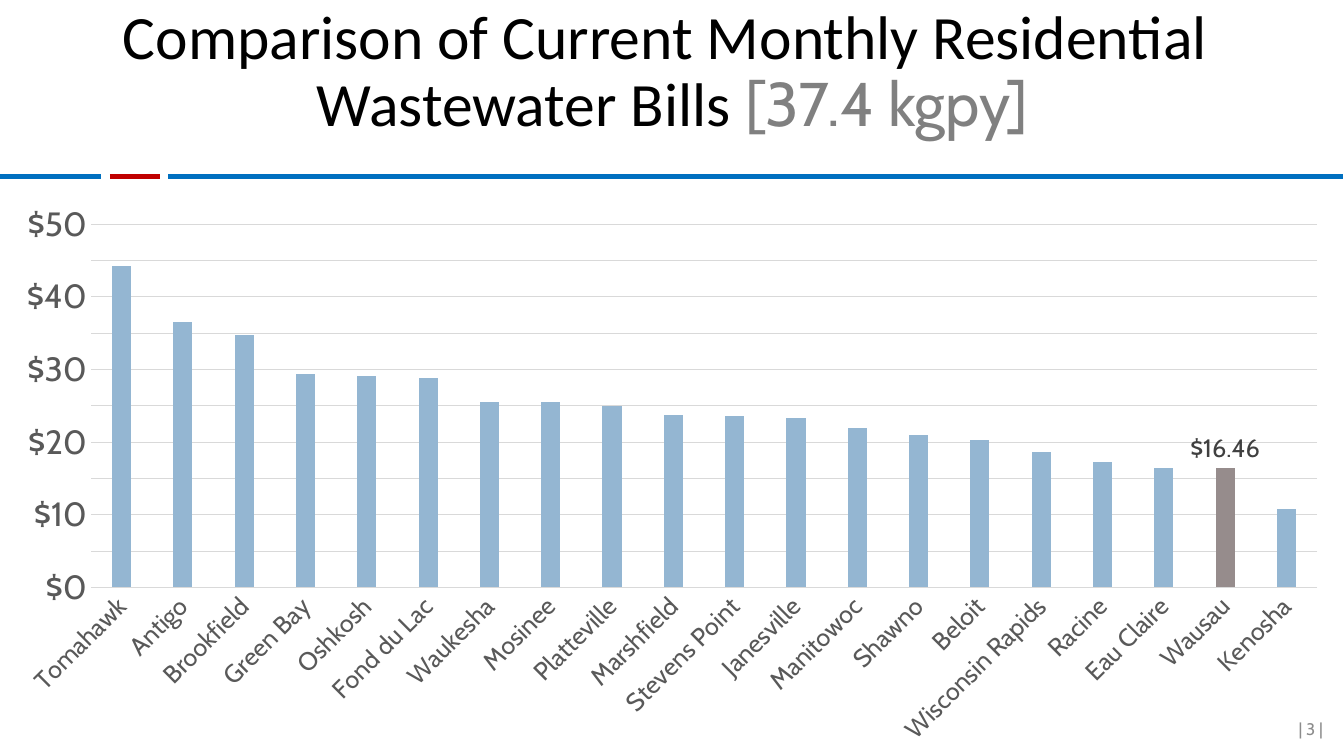
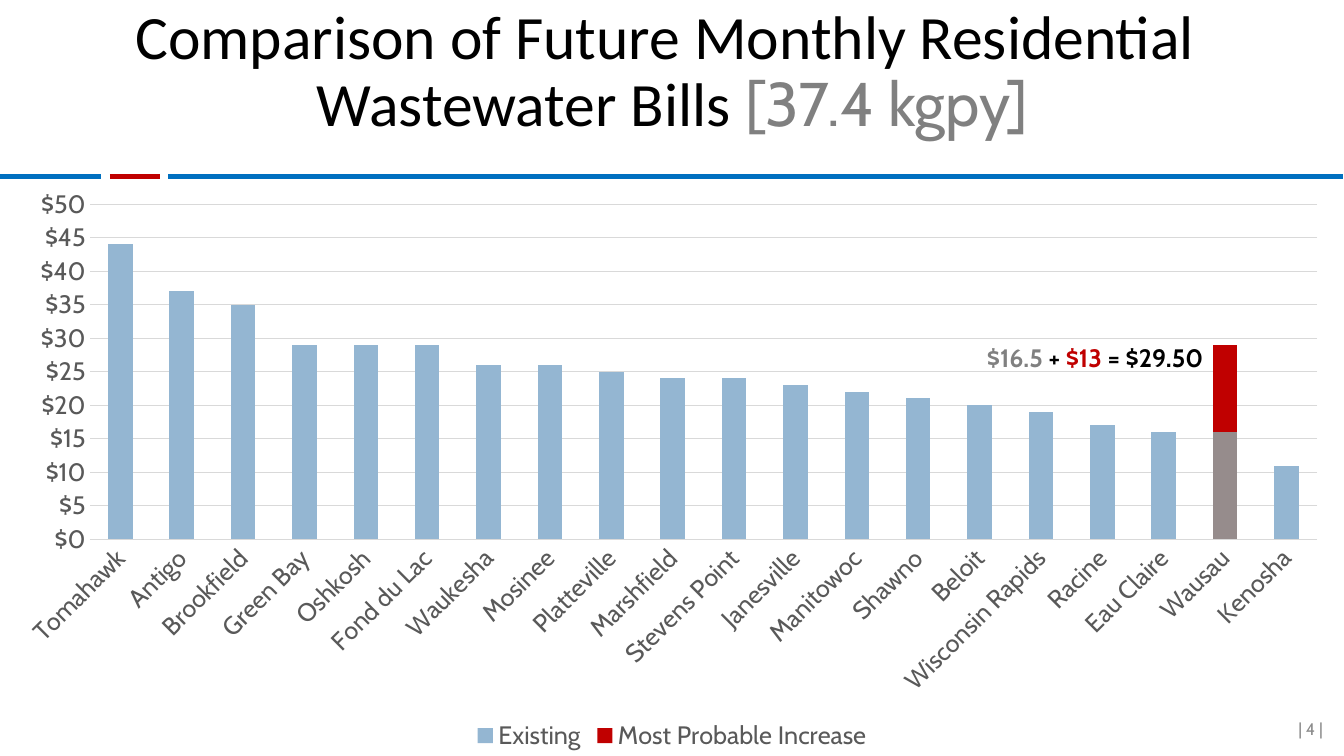
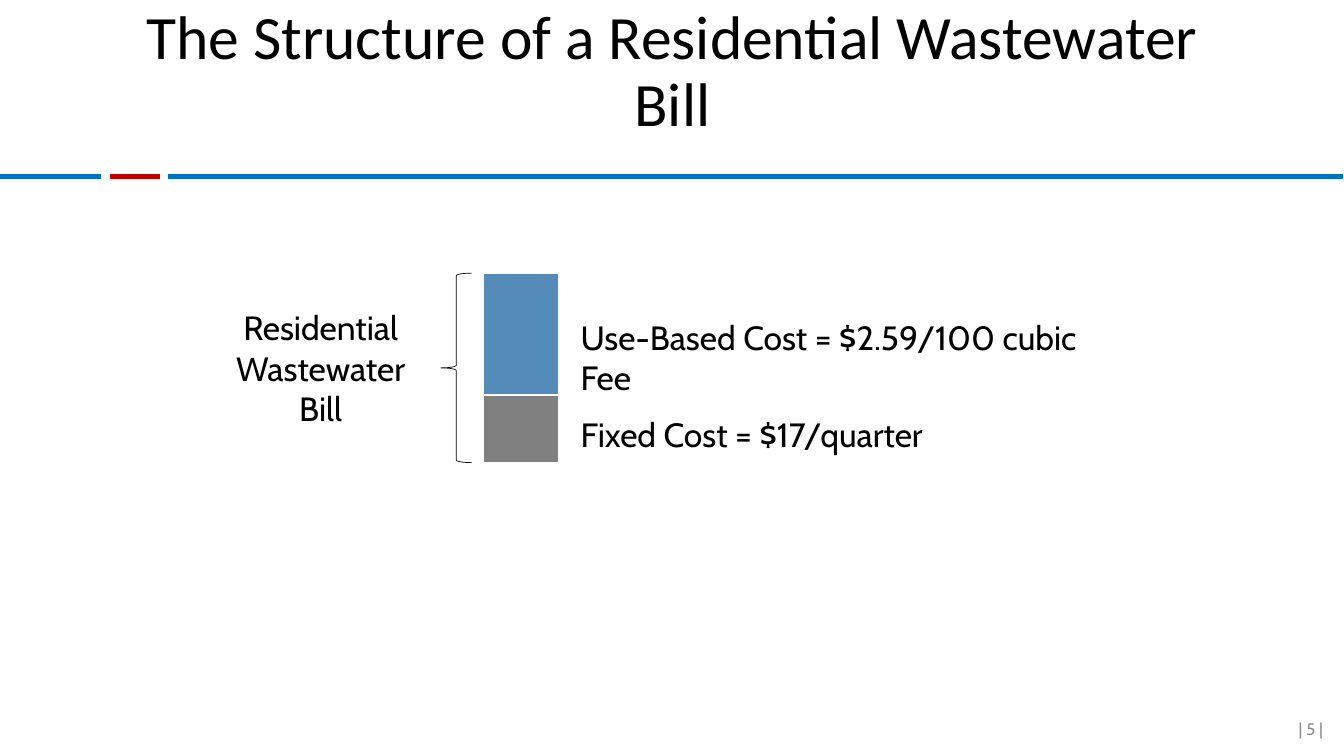
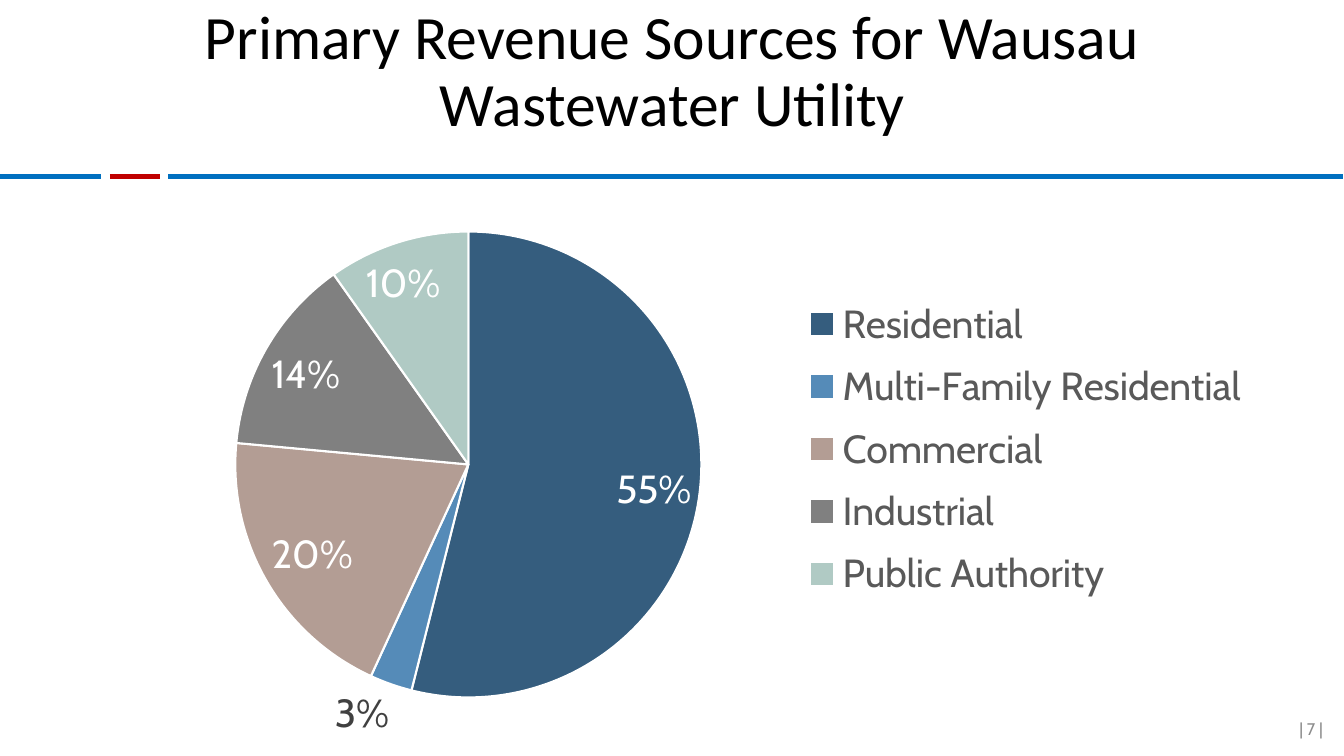
from lxml import etree
from pptx import Presentation
from pptx.chart.data import CategoryChartData
from pptx.dml.color import RGBColor
from pptx.enum.chart import XL_CHART_TYPE, XL_LABEL_POSITION, XL_LEGEND_POSITION, XL_TICK_MARK
from pptx.enum.shapes import MSO_CONNECTOR, MSO_SHAPE
from pptx.enum.text import MSO_ANCHOR, PP_ALIGN
from pptx.oxml import parse_xml
from pptx.oxml.ns import nsdecls, qn
from pptx.util import Inches, Pt

CLUSTERED, STACKED = XL_CHART_TYPE.COLUMN_CLUSTERED, XL_CHART_TYPE.COLUMN_STACKED
PIE = XL_CHART_TYPE.PIE
INSIDE_END, OUTSIDE_END = XL_LABEL_POSITION.INSIDE_END, XL_LABEL_POSITION.OUTSIDE_END
BOTTOM, RIGHT_SIDE = XL_LEGEND_POSITION.BOTTOM, XL_LEGEND_POSITION.RIGHT
NO_TICK = XL_TICK_MARK.NONE
STRAIGHT = MSO_CONNECTOR.STRAIGHT
RECTANGLE, LEFT_BRACE = MSO_SHAPE.RECTANGLE, MSO_SHAPE.LEFT_BRACE
TOP, MIDDLE = MSO_ANCHOR.TOP, MSO_ANCHOR.MIDDLE
LEFT, CENTER, RIGHT = PP_ALIGN.LEFT, PP_ALIGN.CENTER, PP_ALIGN.RIGHT

BLACK = RGBColor(0x00, 0x00, 0x00)
WHITE = RGBColor(0xFF, 0xFF, 0xFF)
BLUE = RGBColor(0x00, 0x70, 0xC0)
RED = RGBColor(0xC0, 0x00, 0x00)
GRAY = RGBColor(0x80, 0x80, 0x80)
NUMBER_GRAY = RGBColor(0x8C, 0x8C, 0x8C)
AXIS_GRAY = RGBColor(0x59, 0x59, 0x59)
LABEL_GRAY = RGBColor(0x40, 0x40, 0x40)
GRID_GRAY = RGBColor(0xD9, 0xD9, 0xD9)
SKY = RGBColor(0x94, 0xB6, 0xD2)
TAUPE = RGBColor(0x96, 0x8C, 0x8C)
STEEL = RGBColor(0x55, 0x8B, 0xB8)
NAVY = RGBColor(0x35, 0x5D, 0x7E)
SAND = RGBColor(0xB3, 0x9D, 0x94)
MINT = RGBColor(0xB0, 0xCA, 0xC4)

TITLE_FONT, BODY_FONT = "Calibri", "Cabin"
RULES = [(1.67, 13.32, BLUE), (0, 1, BLUE), (1.09, 1.59, RED)]
RULE_TOP = 1.75

deck = Presentation()
deck.slide_width, deck.slide_height = Inches(13.33), Inches(7.5)


def write(page, place, spans, size, align=LEFT, anchor=TOP, font=BODY_FONT, bold=False, spacing=None):
    """Add a one-paragraph text box; a span is (text, colour) or (text, colour, font)."""
    box = page.shapes.add_textbox(*map(Inches, place))
    frame = box.text_frame
    frame.word_wrap = True
    frame.vertical_anchor = anchor
    para = frame.paragraphs[0]
    para.alignment = align
    para.line_spacing = spacing
    for text, color, *own_font in spans:
        for number, line in enumerate(text.split("\n")):
            if number:
                para.add_line_break()
            span = para.add_run()
            span.text = line
            span.font.size = Pt(size)
            span.font.name = own_font[0] if own_font else font
            span.font.bold = bold
            span.font.color.rgb = color


def add_page(number, title_spans):
    page = deck.slides.add_slide(deck.slide_layouts[6])
    for start, end, color in RULES:
        rule = page.shapes.add_connector(
            STRAIGHT, Inches(start), Inches(RULE_TOP), Inches(end), Inches(RULE_TOP))
        rule.line.color.rgb = color
        rule.line.width = Pt(3)
        etree.SubElement(rule._element.spPr, qn("a:effectLst"))
    write(page, (0.92, 0, 11.5, 1.45), title_spans, 44, CENTER, MIDDLE, TITLE_FONT, spacing=0.9)
    write(page, (12.42, 7.03, 0.8, 0.4), [(f"| {number} |", NUMBER_GRAY)], 12, RIGHT, MIDDLE)
    return page


# Monthly bills, current and future
BILLS = {
    "Tomahawk": 44.26, "Antigo": 36.52, "Brookfield": 34.68, "Green Bay": 29.4,
    "Oshkosh": 29.06, "Fond du Lac": 28.79, "Waukesha": 25.59, "Mosinee": 25.56,
    "Platteville": 24.94, "Marshfield": 23.76, "Stevens Point": 23.63, "Janesville": 23.28,
    "Manitowoc": 21.93, "Shawno": 20.93, "Beloit": 20.3, "Wisconsin Rapids": 18.6,
    "Racine": 17.33, "Eau Claire": 16.48, "Wausau": 16.46, "Kenosha": 10.77,
}
CITIES = list(BILLS)
WAUSAU = CITIES.index("Wausau")
WHOLE_BILLS = [round(bill) for bill in BILLS.values()]
INCREASE = [13 if city == "Wausau" else 0 for city in CITIES]

bill_pages = [
    (3, "Current", CLUSTERED, 1.91, 24, 219, -27, [("Series 1", BILLS.values(), SKY)]),
    (4, "Future", STACKED, 1.76, 18, 150, 100,
     [("Existing", WHOLE_BILLS, SKY), ("Most Probable Increase", INCREASE, RED)]),
]
for number, period, kind, top, value_size, gap, overlap, columns in bill_pages:
    page = add_page(number, [
        (f"Comparison of {period} Monthly Residential \nWastewater Bills ", BLACK),
        ("[37.4 kgpy]", GRAY, BODY_FONT)])
    data = CategoryChartData(number_format='"$"#,##0.00')
    data.categories = CITIES
    for name, values, _ in columns:
        data.add_series(name, values)
    chart = page.shapes.add_chart(
        kind, Inches(0), Inches(top), Inches(13.33), Inches(7.5 - top), data).chart
    chart.has_title = False
    chart.font.size = Pt(18)
    chart.font.name = BODY_FONT
    plot = chart.plots[0]
    plot.vary_by_categories = False
    plot.gap_width, plot.overlap = gap, overlap
    for series, (_, _, color) in zip(plot.series, columns):
        series.invert_if_negative = False
        series.format.fill.solid()
        series.format.fill.fore_color.rgb = color
    wausau = plot.series[0].points[WAUSAU]
    wausau.format.fill.solid()
    wausau.format.fill.fore_color.rgb = TAUPE

    cities, dollars = chart.category_axis, chart.value_axis
    for axis, size in ((cities, 18), (dollars, value_size)):
        axis.major_tick_mark = axis.minor_tick_mark = NO_TICK
        axis.tick_labels.font.size = Pt(size)
        axis.tick_labels.font.name = BODY_FONT
        axis.tick_labels.font.color.rgb = AXIS_GRAY
    cities._element.txPr.bodyPr.set("rot", "-2700000")
    dollars.minimum_scale, dollars.maximum_scale, dollars.major_unit = 0, 50, 5
    dollars.tick_labels.number_format = '"$"#,##0'
    dollars.tick_labels.number_format_is_linked = False
    dollars.format.line.fill.background()
    for line in (cities.format.line, dollars.major_gridlines.format.line):
        line.color.rgb = GRID_GRAY
        line.width = Pt(0.75)

    chart.has_legend = kind == STACKED
    if chart.has_legend:
        chart.legend.position = BOTTOM
        chart.legend.include_in_layout = False
        chart.legend.font.size = Pt(18)
        chart.legend.font.name = BODY_FONT
        chart.legend.font.color.rgb = AXIS_GRAY
        write(page, (9.3, 3.35, 3.12, 0.4),
              [("$16.5 ", GRAY), ("+ ", BLACK), ("$13 ", RED), ("= $29.50", BLACK)],
              18, CENTER, bold=True)
    else:
        label = wausau.data_label
        label.font.size = Pt(18)
        label.font.name = BODY_FONT
        label.font.color.rgb = LABEL_GRAY
        label.position = OUTSIDE_END

# Structure of a bill
page = add_page(5, [("The Structure of a Residential Wastewater Bill", BLACK)])
bill_parts = [
    (RECTANGLE, (4.79, 2.71, 0.75, 1.21), STEEL, WHITE, 1),
    (RECTANGLE, (4.79, 3.92, 0.75, 0.67), GRAY, WHITE, 1),
    (LEFT_BRACE, (4.37, 2.71, 0.31, 1.88), None, BLACK, 0.5),
]
for kind, place, fill, line, width in bill_parts:
    part = page.shapes.add_shape(kind, *map(Inches, place))
    part.shadow.inherit = False
    if fill is None:
        part.fill.background()
    else:
        part.fill.solid()
        part.fill.fore_color.rgb = fill
    part.line.color.rgb = line
    part.line.width = Pt(width)
for place, text, align in [
    ((5.66, 3.09, 5.56, 0.5), "Use-Based Cost = $2.59/100 cubic Fee", LEFT),
    ((5.66, 4.06, 3.86, 0.5), "Fixed Cost = $17/quarter", LEFT),
    ((2.12, 3, 2.12, 1.31), "Residential Wastewater Bill", CENTER),
]:
    write(page, place, [(text, BLACK)], 24, align)

# Revenue sources
page = add_page(7, [("Primary Revenue Sources for Wausau Wastewater Utility", BLACK)])
sources = [
    ("Residential", 0.55, NAVY, INSIDE_END),
    ("Multi-Family Residential", 0.03, STEEL, OUTSIDE_END),
    ("Commercial", 0.2, SAND, INSIDE_END),
    ("Industrial", 0.14, GRAY, INSIDE_END),
    ("Public Authority", 0.1, MINT, INSIDE_END),
]
data = CategoryChartData(number_format="0%")
data.categories = [name for name, *_ in sources]
data.add_series("Series 1", [share for _, share, *_ in sources])
chart = page.shapes.add_chart(PIE, Inches(0), Inches(1.7), Inches(13.33), Inches(5.8), data).chart
chart.has_title = False
chart.font.size = Pt(10)
chart.font.name = BODY_FONT
series = chart.plots[0].series[0]
labels = series.data_labels
labels.show_value = True
labels.number_format = "0%"
labels.number_format_is_linked = False
labels.position = OUTSIDE_END
labels.font.size = Pt(28)
labels.font.name = BODY_FONT
labels.font.color.rgb = LABEL_GRAY
for index, (_, _, color, position) in enumerate(sources):
    slice_ = series.points[index]
    slice_.format.fill.solid()
    slice_.format.fill.fore_color.rgb = color
    slice_.format.line.color.rgb = WHITE
    slice_.format.line.width = Pt(1.5)
    if position == INSIDE_END:
        label = slice_.data_label
        label.font.size = Pt(28)
        label.font.name = BODY_FONT
        label.font.color.rgb = WHITE
        label.position = INSIDE_END
chart.has_legend = True
legend = chart.legend
legend.position = RIGHT_SIDE
legend.include_in_layout = False
legend.font.size = Pt(28)
legend.font.name = BODY_FONT
legend.font.color.rgb = AXIS_GRAY

# Places of the pie and its legend, and shifts of two labels, as shares of the chart
plot_area = chart._chartSpace.chart.plotArea
for old in plot_area.findall(qn("c:layout")):
    plot_area.remove(old)
residential, public = [
    series._element.xpath(f'c:dLbls/c:dLbl[c:idx/@val="{index}"]')[0] for index in (0, 4)]
EDGES = '<c:xMode val="edge"/><c:yMode val="edge"/>'
for owner, slot, mode, shares in [
    (plot_area, 0, '<c:layoutTarget val="inner"/>' + EDGES, (0.175, 0.103, 0.347, 0.797)),
    (legend._element, 1, EDGES, (0.588, 0.195, 0.35, 0.56)),
    (residential, 1, "", (-0.002, 0.036)),
    (public, 1, "", (-0.025, 0.02)),
]:
    sides = "".join(f'<c:{side} val="{share}"/>' for side, share in zip("xywh", shares))
    owner.insert(slot, parse_xml(
        f'<c:layout {nsdecls("c")}><c:manualLayout>{mode}{sides}</c:manualLayout></c:layout>'))

deck.save("out.pptx")
